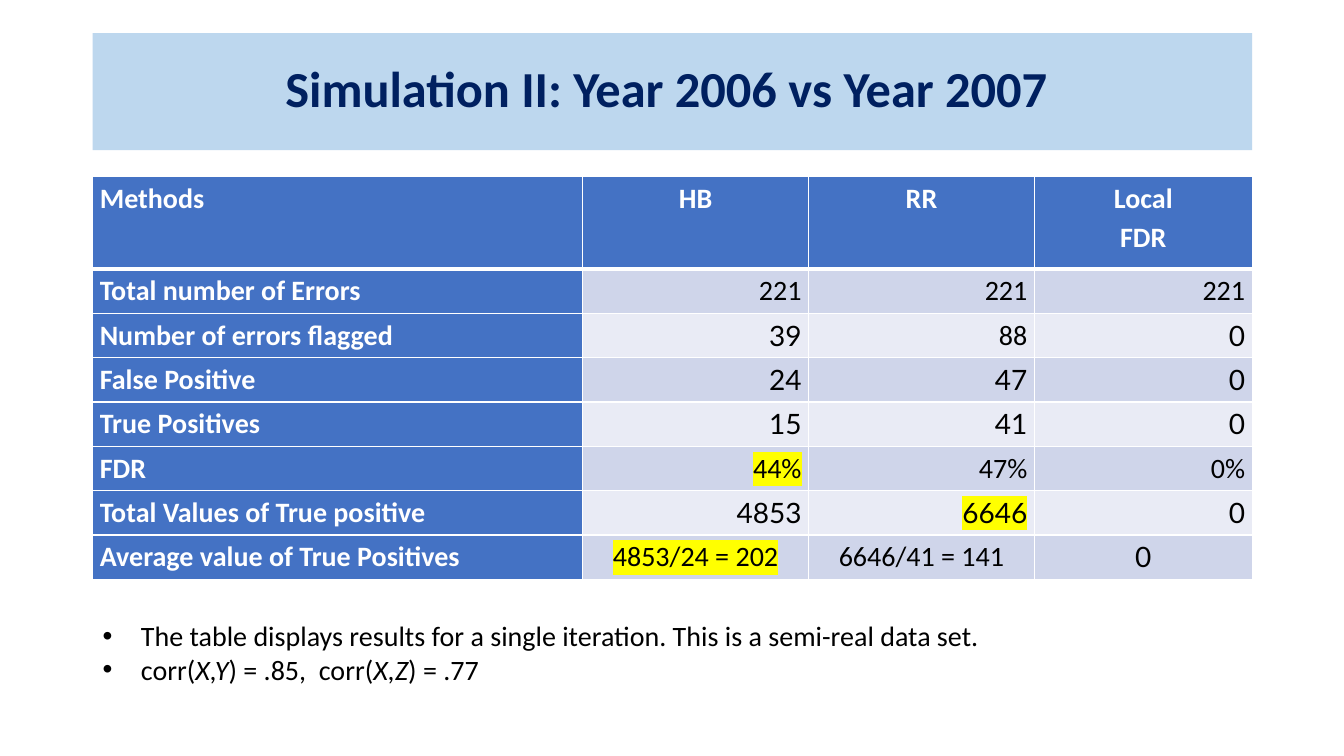
from dataclasses import dataclass

from lxml.etree import SubElement
from pptx import Presentation
from pptx.dml.color import RGBColor
from pptx.enum.shapes import MSO_SHAPE
from pptx.enum.text import MSO_ANCHOR, MSO_AUTO_SIZE, PP_ALIGN
from pptx.oxml import parse_xml
from pptx.oxml.ns import nsdecls, qn
from pptx.util import Inches, Pt


@dataclass(frozen=True)
class Theme:
    body_font: str = "Calibri"
    number_font: str = "Lato"
    title_size: int = 36
    body_size: int = 20
    title_fill: str = "BDD7EE"
    title_text: str = "002060"
    header_fill: str = "4472C4"
    odd_row: str = "CFD5EA"
    even_row: str = "E9EBF5"
    white: str = "FFFFFF"
    black: str = "000000"
    highlight: str = "FFFF00"


theme = Theme()


def add_run(paragraph, text, color, font=theme.body_font, size=theme.body_size, bold=False):
    run = paragraph.add_run()
    run.text = text
    run.font.name = font
    run.font.size = Pt(size)
    run.font.bold = bold
    run.font.color.rgb = RGBColor.from_string(color)
    return run


def set_border(cell, side, points):
    """Draw one white cell border; sides must be set in the order R, T, B, L reversed by insertion."""
    line = parse_xml(
        f'<a:ln{side} {nsdecls("a")} w="{Pt(points)}"><a:solidFill>'
        f'<a:srgbClr val="{theme.white}"/></a:solidFill></a:ln{side}>'
    )
    cell._tc.get_or_add_tcPr().insert(0, line)


presentation = Presentation()
presentation.slide_width = Inches(13.33)
presentation.slide_height = Inches(7.5)
slide = presentation.slides.add_slide(presentation.slide_layouts[6])

# Title banner
banner = slide.shapes.add_shape(
    MSO_SHAPE.RECTANGLE, Inches(0.92), Inches(0.33), Inches(11.5), Inches(1.16)
)
banner.shadow.inherit = False
banner.fill.solid()
banner.fill.fore_color.rgb = RGBColor.from_string(theme.title_fill)
banner.line.fill.background()
banner.text_frame.vertical_anchor = MSO_ANCHOR.MIDDLE
heading = banner.text_frame.paragraphs[0]
heading.alignment = PP_ALIGN.CENTER
heading.line_spacing = 0.9
add_run(heading, "Simulation II: Year 2006 vs Year 2007 ", theme.title_text,
        size=theme.title_size, bold=True)

# Results table
results = [
    ["Methods", "HB", "RR", "Local\nFDR"],
    ["Total number of Errors", "221", "221", "221"],
    ["Number of errors flagged", "39", "88", "0"],
    ["False Positive", "24", "47", "0"],
    ["True Positives", "15", "41", "0"],
    ["FDR", "44%", "47%", "0%"],
    ["Total Values of True positive", "4853", "6646", "0"],
    ["Average value of True Positives", "4853/24 = 202", "6646/41 = 141", "0"],
]
highlighted = {"44%", "6646", "4853/24 = 202"}
body_font_numbers = {"221", "88", "44%", "47%", "0%", "4853/24 = 202", "6646/41 = 141"}
column_widths = [4.86, 2.24, 2.24, 2.16]
row_heights = [0.92] + [0.44] * 7
last_row = len(results) - 1

table = slide.shapes.add_table(
    len(results), len(column_widths), Inches(0.92), Inches(1.75), Inches(11.5), Inches(4)
).table
table.first_row = False
table.horz_banding = False
for column, width in zip(table.columns, column_widths):
    column.width = Inches(width)
for row, height in zip(table.rows, row_heights):
    row.height = Inches(height)

for r, values in enumerate(results):
    for c, value in enumerate(values):
        cell = table.cell(r, c)
        is_label = r == 0 or c == 0
        band = theme.odd_row if r % 2 else theme.even_row
        cell.fill.solid()
        cell.fill.fore_color.rgb = RGBColor.from_string(theme.header_fill if is_label else band)
        cell.margin_left = cell.margin_right = Inches(0.07)
        cell.margin_top = cell.margin_bottom = 0
        for side, points in (("B", 3 if r == 0 else 1), ("T", 3 if r == 1 else 1),
                             ("R", 1), ("L", 1)):
            set_border(cell, side, points)

        if c == 0:
            alignment = PP_ALIGN.LEFT
        elif r in (0, last_row):
            alignment = PP_ALIGN.CENTER
        else:
            alignment = PP_ALIGN.RIGHT
        in_body_font = is_label or value in body_font_numbers
        for i, text in enumerate(value.split("\n")):
            frame = cell.text_frame
            paragraph = frame.add_paragraph() if i else frame.paragraphs[0]
            paragraph.alignment = alignment
            paragraph.line_spacing = 1.15
            run = add_run(paragraph, text, theme.white if is_label else theme.black,
                          font=theme.body_font if in_body_font else theme.number_font,
                          bold=is_label)
            if text in highlighted:
                run_properties = run.font._element
                marker = SubElement(run_properties, qn("a:highlight"))
                SubElement(marker, qn("a:srgbClr"), val=theme.highlight)
                run_properties.find(qn("a:solidFill")).addnext(marker)

# Notes under the table, as (text, italic) runs
remarks = [
    [("The table displays results for a single iteration. This is a semi-real data set.", False)],
    [("corr(", False), ("X,Y", True), (") = .85,  corr(", False), ("X,Z", True), (") = .77", False)],
]
remark_frame = slide.shapes.add_textbox(
    Inches(0.92), Inches(6.09), Inches(11.63), Inches(0.77)
).text_frame
remark_frame.word_wrap = True
remark_frame.auto_size = MSO_AUTO_SIZE.SHAPE_TO_FIT_TEXT
for i, remark in enumerate(remarks):
    paragraph = remark_frame.add_paragraph() if i else remark_frame.paragraphs[0]
    bullet = paragraph._p.get_or_add_pPr()
    bullet.set("marL", str(Inches(0.38)))
    bullet.set("indent", str(-Inches(0.38)))
    SubElement(bullet, qn("a:buFont"), typeface="Arial")
    SubElement(bullet, qn("a:buChar"), char="•")
    for text, italic in remark:
        add_run(paragraph, text, theme.black).font.italic = italic

presentation.save("out.pptx")
